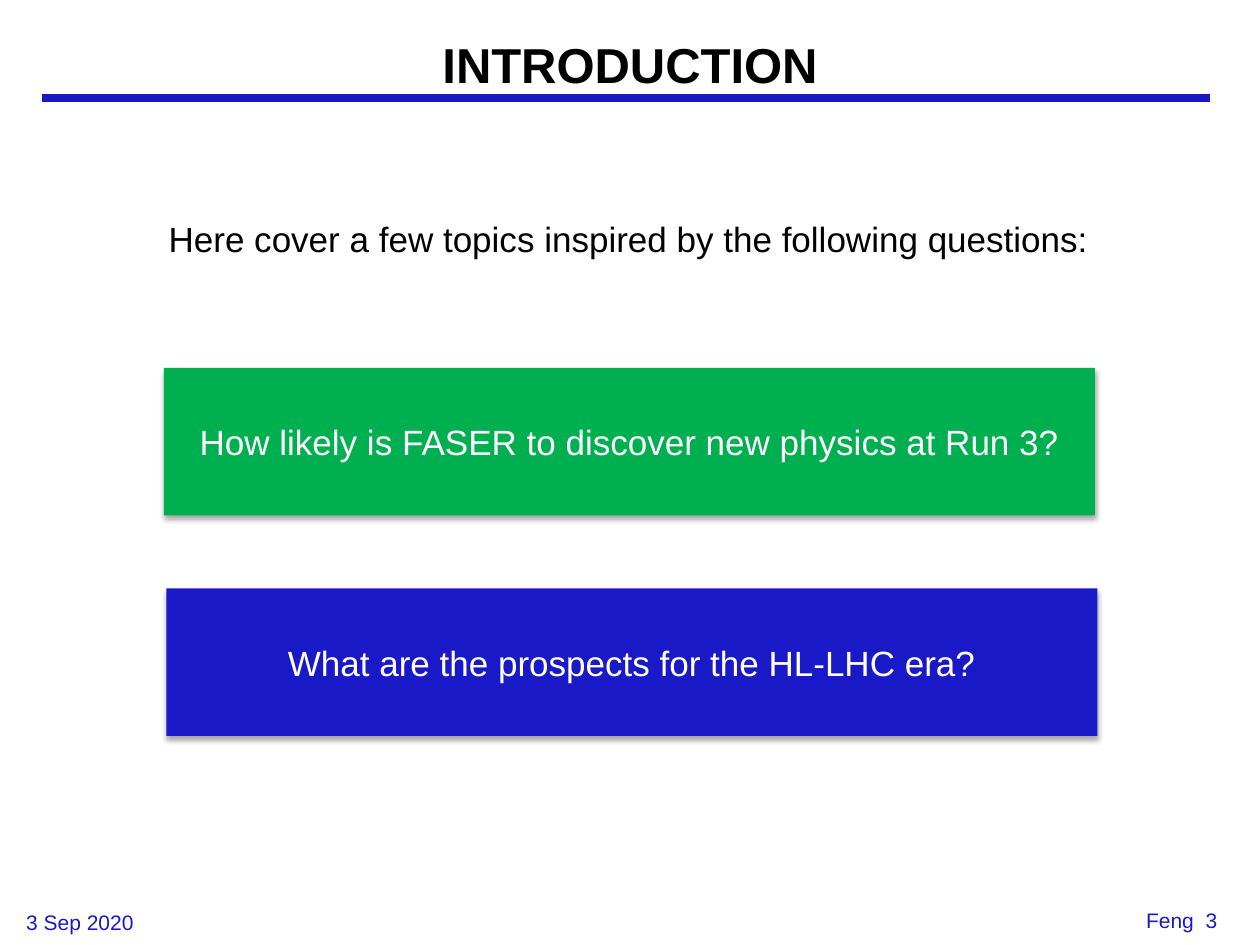
import pptx
import pptx.dml.color
import pptx.enum.shapes
import pptx.enum.text
import pptx.oxml
import pptx.oxml.ns
import pptx.util

RGBColor = pptx.dml.color.RGBColor
ALIGN = pptx.enum.text.PP_ALIGN
ANCHOR = pptx.enum.text.MSO_ANCHOR

BLUE = RGBColor(0x19, 0x19, 0xC8)
GREEN = RGBColor(0x00, 0xB0, 0x50)
BLACK = RGBColor(0x00, 0x00, 0x00)
WHITE = RGBColor(0xFF, 0xFF, 0xFF)

# Grid cells are a tenth of an inch on a 10 by 7.5 inch slide
COLUMNS, ROWS = 100, 75

SHADOW = (
    f'<a:outerShdw {pptx.oxml.ns.nsdecls("a")} blurRad="39370" dist="22860" '
    'dir="5400000" rotWithShape="0"><a:srgbClr val="000000">'
    '<a:alpha val="35000"/></a:srgbClr></a:outerShdw>'
)


class SlideBuilder:
    """Holds the style and the current slide; lengths are in grid cells."""

    font_name = "Arial"

    def __init__(self, presentation):
        self.cell_width = presentation.slide_width / COLUMNS
        self.cell_height = presentation.slide_height / ROWS
        self.slide = presentation.slides.add_slide(presentation.slide_layouts[5])

    def place(self, column, row, width=0, height=0):
        return (int(column * self.cell_width), int(row * self.cell_height),
                int(width * self.cell_width), int(height * self.cell_height))

    def set_text(self, frame, text, size, color, align, anchor, bold=False):
        frame.text = text
        frame.vertical_anchor = anchor
        paragraph = frame.paragraphs[0]
        paragraph.alignment = align
        font = paragraph.font
        font.name, font.size, font.bold = self.font_name, pptx.util.Pt(size), bold
        font.color.rgb = color

    def title(self, text, *cells):
        title = self.slide.shapes.title
        title.left, title.top, title.width, title.height = self.place(*cells)
        self.set_text(title.text_frame, text, 28, BLACK, ALIGN.CENTER,
                      ANCHOR.MIDDLE, bold=True)

    def rule(self, start, end, row, color, weight):
        left, top, _, _ = self.place(start, row)
        right = self.place(end, row)[0]
        rule = self.slide.shapes.add_connector(
            pptx.enum.shapes.MSO_CONNECTOR.STRAIGHT, left, top, right, top)
        rule.line.color.rgb = color
        rule.line.width = pptx.util.Pt(weight)
        rule._element.spPr.append(pptx.oxml.parse_xml(
            f'<a:effectLst {pptx.oxml.ns.nsdecls("a")}/>'))

    def label(self, text, *cells, size=12, color=BLUE, align=ALIGN.LEFT, wrap=True):
        frame = self.slide.shapes.add_textbox(*self.place(*cells)).text_frame
        frame.word_wrap = wrap
        if not wrap:
            frame.auto_size = pptx.enum.text.MSO_AUTO_SIZE.SHAPE_TO_FIT_TEXT
        self.set_text(frame, text, size, color, align, ANCHOR.TOP)

    def question(self, text, fill, *cells):
        box = self.slide.shapes.add_shape(
            pptx.enum.shapes.MSO_SHAPE.RECTANGLE, *self.place(*cells))
        box.fill.solid()
        box.fill.fore_color.rgb = fill
        box.line.fill.background()
        box.shadow.inherit = False
        effects = box._element.spPr.find(pptx.oxml.ns.qn("a:effectLst"))
        effects.append(pptx.oxml.parse_xml(SHADOW))
        self.set_text(box.text_frame, text, 20, WHITE, ALIGN.CENTER, ANCHOR.MIDDLE)


def main():
    presentation = pptx.Presentation()
    presentation.slide_width = pptx.util.Inches(10)
    presentation.slide_height = pptx.util.Inches(7.5)
    builder = SlideBuilder(presentation)

    # Heading and footer
    builder.rule(3.3, 96, 7.8, BLUE, 4.5)
    builder.label("3 Sep 2020", 1.1, 71.7, 20.8, 3.1)
    builder.label("Feng  3", 76.8, 71.5, 20.8, 3.5, align=ALIGN.RIGHT)
    builder.title("INTRODUCTION", 7.5, 1.1, 85, 8)

    # Questions
    builder.question("How likely is FASER to discover new physics at Run 3?",
                     GREEN, 13, 29.2, 73.9, 11.7)
    builder.question("What are the prospects for the HL-LHC era?",
                     BLUE, 13.2, 46.7, 73.9, 11.7)

    # Lead-in
    builder.label("Here cover a few topics inspired by the following questions:",
                  12.4, 16.8, 75.6, 4.4, size=20, color=BLACK, wrap=False)

    presentation.save("out.pptx")


if __name__ == "__main__":
    main()
